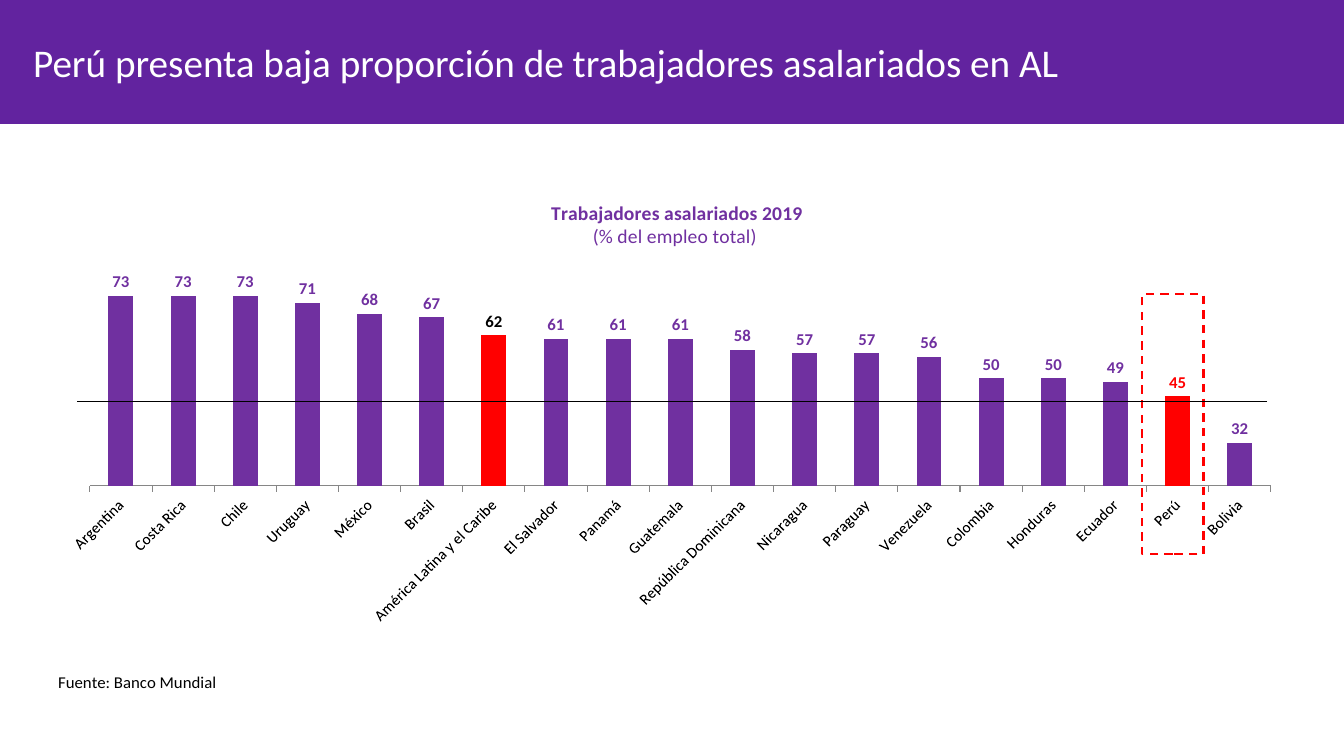
from dataclasses import dataclass
from typing import Optional

import lxml.etree
import pptx
import pptx.chart.data
import pptx.dml.color
import pptx.enum.chart
import pptx.enum.dml
import pptx.enum.shapes
import pptx.oxml
import pptx.oxml.ns
import pptx.util

Pt = pptx.util.Pt
RGBColor = pptx.dml.color.RGBColor
qn = pptx.oxml.ns.qn

BANNER_PURPLE = RGBColor(0x62, 0x23, 0x9F)
BAR_PURPLE = RGBColor(0x70, 0x30, 0xA0)
RED = RGBColor(0xFF, 0x00, 0x00)
BLACK = RGBColor(0x00, 0x00, 0x00)
WHITE = RGBColor(0xFF, 0xFF, 0xFF)
AXIS_GRAY = RGBColor(0x86, 0x86, 0x86)
FONT = "Calibri"


@dataclass(frozen=True)
class Country:
    name: str
    share: int
    highlight: Optional[RGBColor] = None


@dataclass(frozen=True)
class Span:
    text: str
    size: float
    color: RGBColor
    bold: bool = False


COUNTRIES = [
    Country("Argentina", 73),
    Country("Costa Rica", 73),
    Country("Chile", 73),
    Country("Uruguay", 71),
    Country("México", 68),
    Country("Brasil", 67),
    Country("América Latina y el Caribe", 62, BLACK),
    Country("El Salvador", 61),
    Country("Panamá", 61),
    Country("Guatemala", 61),
    Country("República Dominicana", 58),
    Country("Nicaragua", 57),
    Country("Paraguay", 57),
    Country("Venezuela", 56),
    Country("Colombia", 50),
    Country("Honduras", 50),
    Country("Ecuador", 49),
    Country("Perú", 45, RED),
    Country("Bolivia", 32),
]


def style_font(font, size: float, color: RGBColor, bold: bool = False) -> None:
    font.name = FONT
    font.size = Pt(size)
    font.bold = bold
    font.color.rgb = color


def write(frame, lines: list[Span]) -> None:
    for index, line in enumerate(lines):
        para = frame.add_paragraph() if index else frame.paragraphs[0]
        span = para.add_run()
        span.text = line.text
        style_font(span.font, line.size, line.color, line.bold)


def set_layout(parent, index: int, **values) -> None:
    for old in parent.findall(qn("c:layout")):
        parent.remove(old)
    layout = pptx.oxml.ns.nsmap and lxml.etree.Element(qn("c:layout"))
    manual = lxml.etree.SubElement(layout, qn("c:manualLayout"))
    for tag, value in values.items():
        lxml.etree.SubElement(manual, qn(f"c:{tag}")).set("val", str(value))
    parent.insert(index, layout)


def add_banner(page) -> None:
    banner = page.shapes.add_shape(
        pptx.enum.shapes.MSO_SHAPE.RECTANGLE, 0, 0, Pt(960), Pt(88.56))
    banner.shadow.inherit = False
    banner.fill.solid()
    banner.fill.fore_color.rgb = BANNER_PURPLE
    banner.line.fill.background()


def add_heading(page) -> None:
    box = page.shapes.add_textbox(Pt(16.56), Pt(23.76), Pt(906.5), Pt(41))
    box.text_frame.word_wrap = True
    write(box.text_frame, [
        Span("Perú presenta baja proporción de trabajadores asalariados en AL", 28, WHITE)])


def style_axes(chart) -> None:
    category_axis = chart.category_axis
    category_axis.tick_label_position = pptx.enum.chart.XL_TICK_LABEL_POSITION.LOW
    category_axis.major_tick_mark = pptx.enum.chart.XL_TICK_MARK.OUTSIDE
    category_axis.has_major_gridlines = False
    category_axis.format.line.color.rgb = AXIS_GRAY
    category_axis.format.line.width = Pt(0.75)
    style_font(category_axis.tick_labels.font, 11, BLACK)
    category_axis._element.txPr.bodyPr.set("rot", "-2700000")
    source = category_axis.axis_title
    write(source.text_frame, [Span("Fuente: Banco Mundial", 12, BLACK)])
    set_layout(source._element, 1, xMode="edge", yMode="edge", x=0.003, y=0.953)

    value_axis = chart.value_axis
    value_axis.minimum_scale = 20
    value_axis.maximum_scale = 90
    value_axis.has_major_gridlines = False
    value_axis.visible = False


def style_bars(plot) -> None:
    outside = pptx.enum.chart.XL_LABEL_POSITION.OUTSIDE_END
    plot.gap_width = 150
    plot.vary_by_categories = False
    bars = plot.series[0]
    bars.format.fill.solid()
    bars.format.fill.fore_color.rgb = BAR_PURPLE
    labels = bars.data_labels
    labels.show_value = True
    labels.position = outside
    labels.number_format = "#,##0"
    labels.number_format_is_linked = False
    style_font(labels.font, 12, BAR_PURPLE, True)
    for index, country in enumerate(COUNTRIES):
        if country.highlight is not None:
            point = bars.points[index]
            point.format.fill.solid()
            point.format.fill.fore_color.rgb = RED
            style_font(point.data_label.font, 12, country.highlight, True)
            point.data_label.position = outside


def add_worker_chart(page) -> None:
    data = pptx.chart.data.CategoryChartData()
    data.categories = [country.name for country in COUNTRIES]
    data.add_series("Trabajadores asalariados", [country.share for country in COUNTRIES])
    chart = page.shapes.add_chart(
        pptx.enum.chart.XL_CHART_TYPE.COLUMN_CLUSTERED,
        Pt(36.72), Pt(127.44), Pt(887.04), Pt(370.8), data).chart
    chart.has_legend = False
    style_font(chart.font, 10, BLACK)
    chart.has_title = True
    write(chart.chart_title.text_frame, [
        Span("Trabajadores asalariados 2019", 14, BAR_PURPLE, True),
        Span("(% del empleo total) ", 14, BAR_PURPLE)])
    set_layout(chart.chart_title._element, 1, xMode="edge", yMode="edge", x=0.4, y=0.035)
    set_layout(chart._chartSpace.chart.plotArea, 0, layoutTarget="inner",
               xMode="edge", yMode="edge", x=0.031, y=0.11, w=0.951, h=0.489)
    style_axes(chart)
    style_bars(chart.plots[0])


def add_peru_frame(page) -> None:
    frame = page.shapes.add_shape(
        pptx.enum.shapes.MSO_SHAPE.RECTANGLE, Pt(815.76), Pt(210.24), Pt(43.92), Pt(185.76))
    frame.shadow.inherit = False
    frame.fill.background()
    frame.line.color.rgb = RED
    frame.line.width = Pt(1.5)
    frame.line.dash_style = pptx.enum.dml.MSO_LINE.DASH


def add_reference_line(page) -> None:
    line = page.shapes.add_connector(
        pptx.enum.shapes.MSO_CONNECTOR.STRAIGHT, Pt(905.04), Pt(286.56), Pt(54.72), Pt(286.56))
    line.line.color.rgb = BLACK
    line.line.width = Pt(0.5)
    lxml.etree.SubElement(line._element.spPr, qn("a:effectLst"))


def main() -> None:
    deck = pptx.Presentation()
    deck.slide_width = Pt(960)
    deck.slide_height = Pt(540)
    page = deck.slides.add_slide(deck.slide_layouts[6])
    add_banner(page)
    add_worker_chart(page)
    add_heading(page)
    add_peru_frame(page)
    add_reference_line(page)
    deck.save("out.pptx")


if __name__ == "__main__":
    main()
